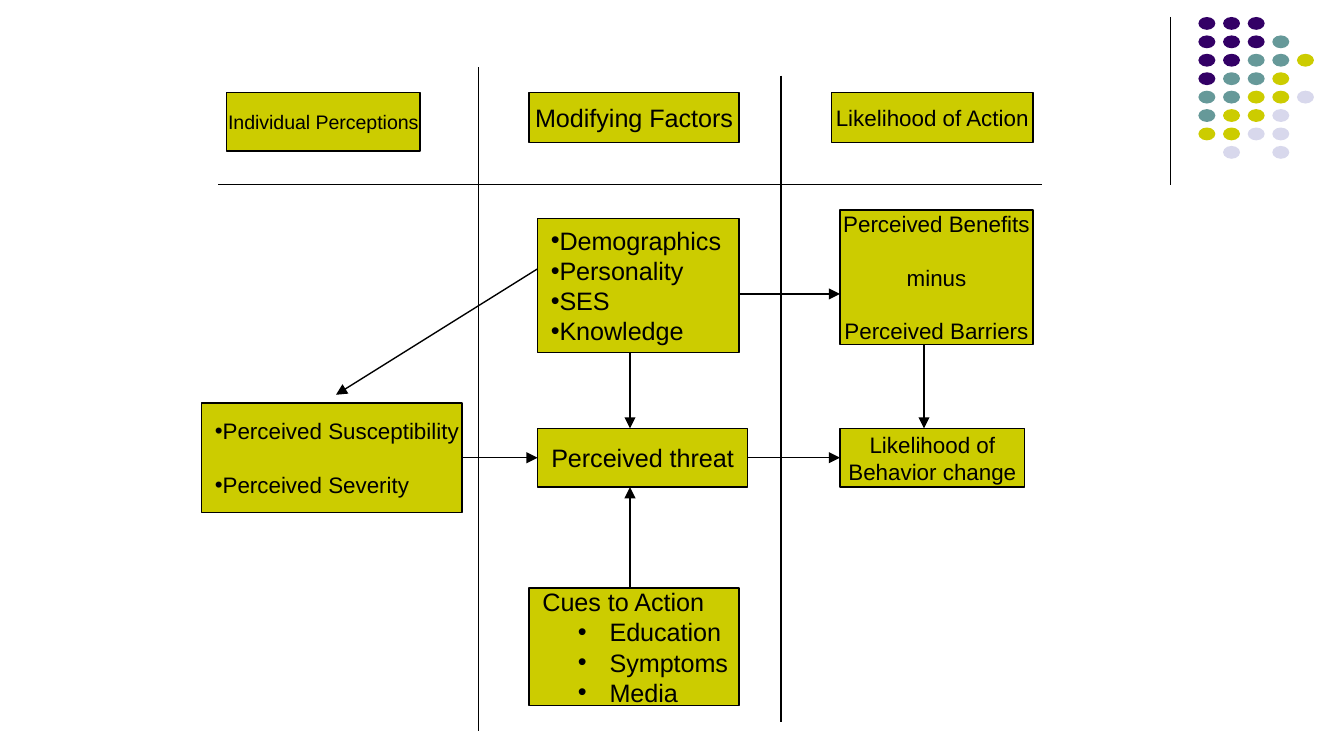
"""Draw a health belief model as boxes and arrows in three columns."""
from dataclasses import dataclass

from lxml import etree
from pptx import Presentation
from pptx.dml.color import RGBColor
from pptx.enum.shapes import MSO_CONNECTOR, MSO_SHAPE
from pptx.enum.text import MSO_ANCHOR, PP_ALIGN
from pptx.oxml.ns import qn
from pptx.util import Pt

RECT, OVAL = MSO_SHAPE.RECTANGLE, MSO_SHAPE.OVAL
STRAIGHT = MSO_CONNECTOR.STRAIGHT
MIDDLE = MSO_ANCHOR.MIDDLE
LEFT, CENTER = PP_ALIGN.LEFT, PP_ALIGN.CENTER
LEFT_SIDE, RIGHT_SIDE = 1, 3


@dataclass(frozen=True)
class Theme:
    """Hold the colours, font and sizes of the slide."""
    ink: RGBColor = RGBColor(0x00, 0x00, 0x00)
    gold: RGBColor = RGBColor(0xCC, 0xCC, 0x00)
    plum: RGBColor = RGBColor(0x33, 0x00, 0x66)
    teal: RGBColor = RGBColor(0x66, 0x99, 0x99)
    pale: RGBColor = RGBColor(0xD8, 0xD8, 0xEC)
    font: str = "Arial"
    small: float = 10.5
    mid: float = 12
    large: float = 13.5
    rule: float = 0.75


THEME = Theme()
HUES = {"P": THEME.plum, "T": THEME.teal, "Y": THEME.gold, "L": THEME.pale}
DOTS = ("PPP", "PPPT", "PPTTY", "PTTY", "TTYYL", "TYYL", "YYLL", " L L")


def add_dots(slide, left, top):
    """Place the grid of coloured dots in the corner."""
    group = slide.shapes.add_group_shape()
    for row, line in enumerate(DOTS):
        for col, key in enumerate(line):
            if key == " ":
                continue
            dot = group.shapes.add_shape(
                OVAL, Pt(left + 13.2 * col), Pt(top + 9.87 * row), Pt(9.1), Pt(6.9))
            dot.shadow.inherit = False
            dot.fill.solid()
            dot.fill.fore_color.rgb = HUES[key]
            dot.line.fill.background()


def add_box(slide, area, text, size, align=CENTER, gap=0):
    """Add a gold box with one paragraph for each line of text."""
    box = slide.shapes.add_shape(RECT, *map(Pt, area))
    box.shadow.inherit = False
    box.fill.solid()
    box.fill.fore_color.rgb = THEME.gold
    box.line.color.rgb = THEME.ink
    box.line.width = Pt(THEME.rule)
    frame = box.text_frame
    frame.text = text
    frame.word_wrap = False
    frame.vertical_anchor = MIDDLE
    for index, para in enumerate(frame.paragraphs):
        para.alignment = align
        para.space_before = Pt(gap if index else 0)
        for run in para.runs:
            run.font.name = THEME.font
            run.font.size = Pt(size)
            run.font.color.rgb = THEME.ink
    return box


def add_marks(paras, level=0, margin=0, indent=0):
    """Give bullets to the paragraphs."""
    for para in paras:
        para.level = level
        props = para._p.get_or_add_pPr()
        props.set("marL", str(Pt(margin)))
        props.set("indent", str(Pt(indent)))
        etree.SubElement(props, qn("a:buFont")).set("typeface", THEME.font)
        etree.SubElement(props, qn("a:buChar")).set("char", "•")


def add_line(slide, start, end, head=False):
    """Add a thin line, with an arrowhead at its end if asked."""
    line = slide.shapes.add_connector(STRAIGHT, *map(Pt, start + end))
    line.line.color.rgb = THEME.ink
    line.line.width = Pt(THEME.rule)
    props = line.element.spPr
    if head:
        etree.SubElement(props.find(qn("a:ln")), qn("a:tailEnd")).set("type", "triangle")
    etree.SubElement(props, qn("a:effectLst"))
    return line


def join(slide, first, second):
    """Link the right side of one box to the left side of another."""
    line = add_line(slide, (0, 0), (0, 0), head=True)
    line.begin_connect(first, RIGHT_SIDE)
    line.end_connect(second, LEFT_SIDE)


def main():
    """Build the slide and save it."""
    deck = Presentation()
    deck.slide_width, deck.slide_height = Pt(720), Pt(405)
    slide = deck.slides.add_slide(deck.slide_layouts[6])

    add_line(slide, (627, 9), (627, 99))
    add_dots(slide, 642, 9.1)

    add_box(slide, (121.5, 49.5, 103.5, 31.5), "Individual Perceptions", THEME.small)
    add_box(slide, (283.5, 49.5, 112.5, 27), "Modifying Factors", THEME.large)
    add_box(slide, (445.5, 49.5, 108, 27), "Likelihood of Action", THEME.mid)

    traits = add_box(slide, (288, 117, 108, 72),
                     "Demographics\nPersonality\nSES\nKnowledge", THEME.large, LEFT)
    add_marks(traits.text_frame.paragraphs)
    threat = add_box(slide, (288, 229.5, 112.5, 31.5), "Perceived threat", THEME.large)
    cues = add_box(slide, (283.5, 315, 112.5, 63),
                   "Cues to Action\nEducation\nSymptoms\nMedia", THEME.large, LEFT)
    add_marks(cues.text_frame.paragraphs[1:], level=1, margin=36, indent=-17)
    risk = add_box(slide, (108, 216, 139.5, 58.5),
                   "Perceived Susceptibility\nPerceived Severity", THEME.mid, LEFT, gap=14.3)
    add_marks(risk.text_frame.paragraphs)
    add_box(slide, (450, 112.5, 103.5, 72),
            "Perceived Benefits\nminus\nPerceived Barriers", THEME.mid, gap=14.3)
    change = add_box(slide, (450, 229.5, 99, 31.5),
                     "Likelihood of\nBehavior change", THEME.mid)

    join(slide, risk, threat)
    join(slide, threat, change)
    for start, end in (((337.5, 189), (337.5, 229.5)),
                       ((337.5, 315), (337.5, 261)),
                       ((288, 144), (180, 211.5)),
                       ((396, 157.5), (450, 157.5)),
                       ((495, 184.5), (495, 229.5))):
        add_line(slide, start, end, head=True)

    add_line(slide, (117, 99), (558, 99))
    add_line(slide, (256.5, 36), (256.5, 391.5))
    add_line(slide, (418.5, 40.5), (418.5, 387))
    deck.save("out.pptx")


if __name__ == "__main__":
    main()
